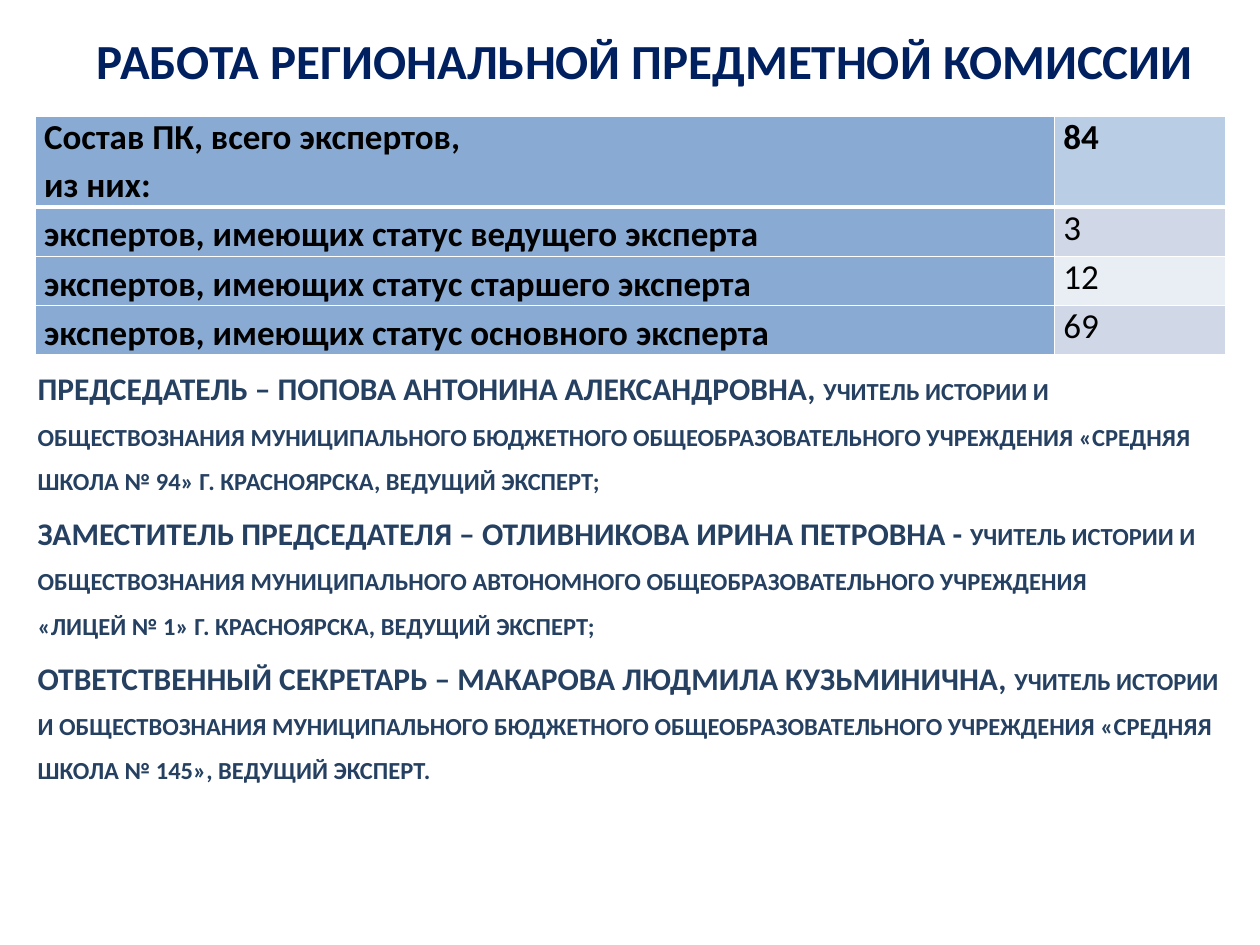
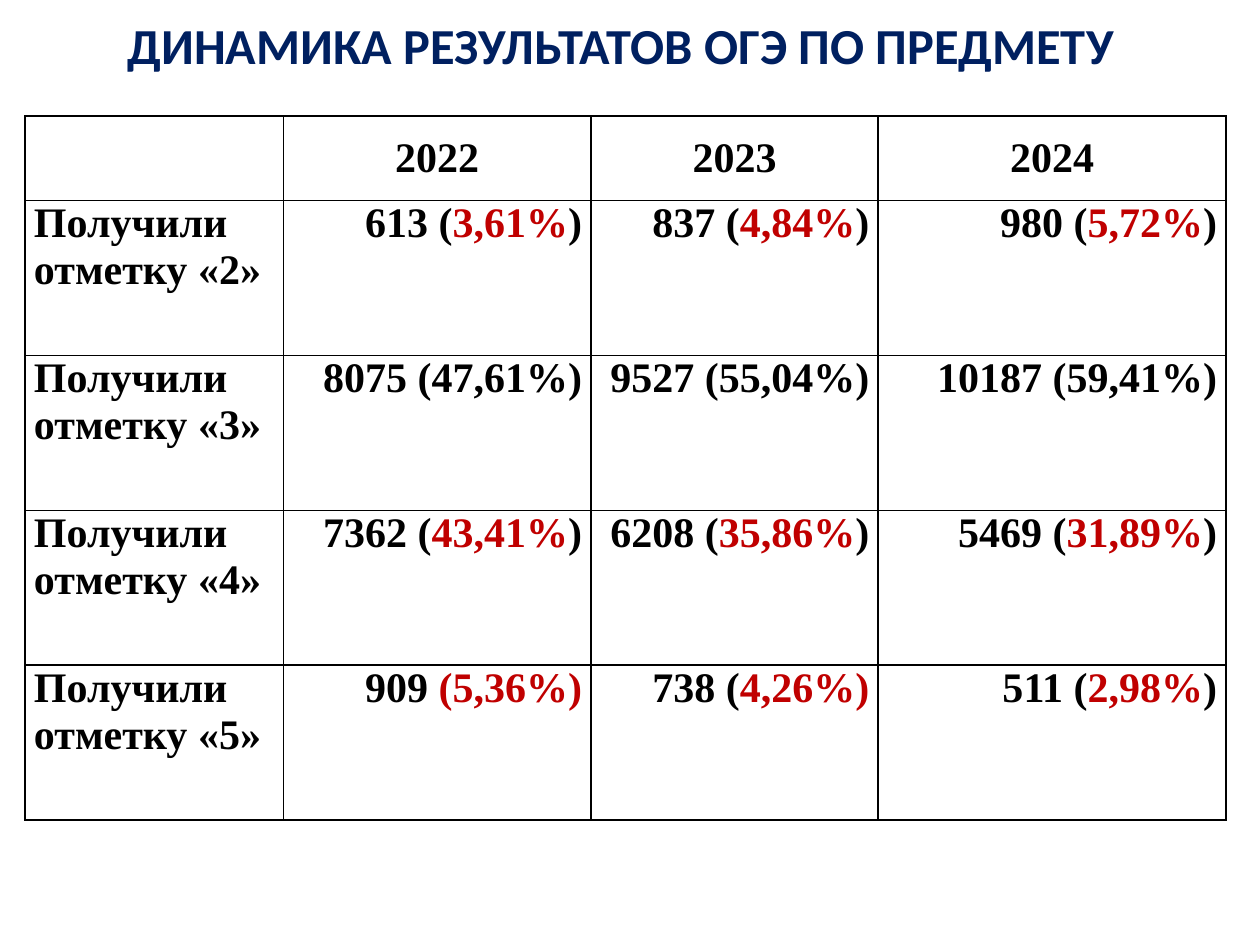
from dataclasses import dataclass

from lxml import etree
from pptx import Presentation
from pptx.dml.color import RGBColor
from pptx.enum.text import MSO_ANCHOR, MSO_AUTO_SIZE, PP_ALIGN
from pptx.oxml.ns import qn
from pptx.util import Inches, Pt

LEFT, CENTER, RIGHT = PP_ALIGN.LEFT, PP_ALIGN.CENTER, PP_ALIGN.RIGHT
TOP, MIDDLE = MSO_ANCHOR.TOP, MSO_ANCHOR.MIDDLE


@dataclass(frozen=True)
class Theme:
    sans: str = "Calibri"
    serif: str = "Times New Roman"
    title: str = "002060"
    body: str = "254061"
    black: str = "000000"
    white: str = "FFFFFF"
    accent: str = "C00000"
    label_fill: str = "89AAD3"
    total_fill: str = "B9CDE5"
    band_dark: str = "D0D8E8"
    band_light: str = "E9EDF4"
    experts_size: float = 20
    results_size: float = 24
    name_size: float = 18
    post_size: float = 14


THEME = Theme()


def style(font, name, size, color, bold=True):
    font.name = name
    font.size = Pt(size)
    font.bold = bold
    font.color.rgb = RGBColor.from_string(color)


def frame_cell(cell, color, top=1, bottom=1):
    cell.margin_left = cell.margin_right = Inches(0.07)
    cell.margin_top = cell.margin_bottom = 0
    properties = cell._tc.get_or_add_tcPr()
    for side, width in (("L", 1), ("R", 1), ("T", top), ("B", bottom)):
        line = etree.SubElement(properties, qn(f"a:ln{side}"), w=str(Pt(width)))
        solid = etree.SubElement(line, qn("a:solidFill"))
        etree.SubElement(solid, qn("a:srgbClr"), val=color)


deck = Presentation()
deck.slide_width, deck.slide_height = Inches(10), Inches(7.5)

titles = [
    ("РАБОТА РЕГИОНАЛЬНОЙ ПРЕДМЕТНОЙ КОМИССИИ", (0.43, 0.13, 9.37, 0.69), 28),
    ("ДИНАМИКА РЕЗУЛЬТАТОВ ОГЭ ПО ПРЕДМЕТУ\v", (0.43, 0.21, 9, 0.76), 28.8),
]
pages = []
for text, place, size in titles:
    page = deck.slides.add_slide(deck.slide_layouts[5])
    title = page.shapes.title
    title.left, title.top, title.width, title.height = map(Inches, place)
    title.text_frame.text = text
    title.text_frame.auto_size = MSO_AUTO_SIZE.NONE
    title.text_frame.vertical_anchor = MIDDLE
    para = title.text_frame.paragraphs[0]
    para.alignment = CENTER
    style(para.font, THEME.sans, size, THEME.title)
    pages.append(page)
commission_page, results_page = pages

tables = []
for page, place, widths, heights in [
    (commission_page, (0.28, 0.92, 9.45, 1.89), [8.09, 1.36], [0.71] + [0.39] * 3),
    (results_page, (0.2, 0.92, 9.53, 5.6), [2.05, 2.44, 2.28, 2.76], [0.67] + [1.23] * 4),
]:
    table = page.shapes.add_table(len(heights), len(widths), *map(Inches, place)).table
    table.first_row = table.horz_banding = False
    for column, width in zip(table.columns, widths):
        column.width = Inches(width)
    for row, height in zip(table.rows, heights):
        row.height = Inches(height)
    tables.append(table)
experts_table, results_table = tables

experts = [
    ("Состав ПК, всего экспертов,\nиз них:", "84", THEME.total_fill),
    ("экспертов, имеющих статус ведущего эксперта", "3", THEME.band_dark),
    ("экспертов, имеющих статус старшего эксперта", "12", THEME.band_light),
    ("экспертов, имеющих статус основного эксперта", "69", THEME.band_dark),
]
for row_index, (label, count, count_fill) in enumerate(experts):
    is_total = row_index == 0
    for column_index, (text, fill) in enumerate([(label, THEME.label_fill), (count, count_fill)]):
        is_label = column_index == 0
        cell = experts_table.cell(row_index, column_index)
        frame_cell(cell, THEME.white, top=3 if row_index == 1 else 1, bottom=3 if is_total else 1)
        cell.fill.solid()
        cell.fill.fore_color.rgb = RGBColor.from_string(fill)
        cell.text = text
        for para_index, para in enumerate(cell.text_frame.paragraphs):
            para.space_before = Pt(2 if para_index else 0)
            para.space_after = Pt(1)
            if is_label and not is_total:
                para.line_spacing = 1.15
            style(para.font, THEME.sans, THEME.experts_size, THEME.black, is_label or is_total)

officers = [
    ("ПРЕДСЕДАТЕЛЬ – ПОПОВА АНТОНИНА АЛЕКСАНДРОВНА, ",
     "УЧИТЕЛЬ ИСТОРИИ И ОБЩЕСТВОЗНАНИЯ МУНИЦИПАЛЬНОГО БЮДЖЕТНОГО ОБЩЕОБРАЗОВАТЕЛЬНОГО "
     "УЧРЕЖДЕНИЯ «СРЕДНЯЯ ШКОЛА № 94» Г. КРАСНОЯРСКА, ВЕДУЩИЙ ЭКСПЕРТ;"),
    ("ЗАМЕСТИТЕЛЬ ПРЕДСЕДАТЕЛЯ – ОТЛИВНИКОВА ИРИНА ПЕТРОВНА - ",
     "УЧИТЕЛЬ ИСТОРИИ И ОБЩЕСТВОЗНАНИЯ МУНИЦИПАЛЬНОГО АВТОНОМНОГО ОБЩЕОБРАЗОВАТЕЛЬНОГО "
     "УЧРЕЖДЕНИЯ"),
    ("", "«ЛИЦЕЙ № 1» Г. КРАСНОЯРСКА, ВЕДУЩИЙ ЭКСПЕРТ;"),
    ("ОТВЕТСТВЕННЫЙ СЕКРЕТАРЬ – МАКАРОВА ЛЮДМИЛА КУЗЬМИНИЧНА, ",
     "УЧИТЕЛЬ ИСТОРИИ И ОБЩЕСТВОЗНАНИЯ МУНИЦИПАЛЬНОГО БЮДЖЕТНОГО ОБЩЕОБРАЗОВАТЕЛЬНОГО "
     "УЧРЕЖДЕНИЯ «СРЕДНЯЯ ШКОЛА № 145», ВЕДУЩИЙ ЭКСПЕРТ."),
]
officers_box = commission_page.shapes.add_textbox(*map(Inches, (0.2, 2.73, 9.72, 3.55)))
officers_frame = officers_box.text_frame
officers_frame.word_wrap = True
for index, (name, post) in enumerate(officers):
    para = officers_frame.add_paragraph() if index else officers_frame.paragraphs[0]
    para.line_spacing = 1.5
    for text, size in [(name, THEME.name_size), (post, THEME.post_size)]:
        if text:
            span = para.add_run()
            span.text = text
            style(span.font, THEME.sans, size, THEME.body)

results = [
    ["", "2022", "2023", "2024"],
    ["Получили отметку «2»", "613 (|3,61%|)", "837 (|4,84%|)", "980 (|5,72%|)"],
    ["Получили отметку «3»", "8075 (47,61%)", "9527 (55,04%)", "10187 (59,41%)"],
    ["Получили отметку «4»", "7362 (|43,41%|)", "6208 (|35,86%|)", "5469 (|31,89%|)"],
    ["Получили отметку «5»", "909 |(5,36%)", "738 (|4,26%)", "511 (|2,98%|)"],
]
for row_index, values in enumerate(results):
    for column_index, value in enumerate(values):
        cell = results_table.cell(row_index, column_index)
        frame_cell(cell, THEME.black)
        cell.fill.background()
        cell.vertical_anchor = TOP if row_index else MIDDLE
        para = cell.text_frame.paragraphs[0]
        para.alignment = CENTER if row_index == 0 else RIGHT if column_index else LEFT
        style(para.font, THEME.serif, THEME.results_size, THEME.black)
        for part_index, part in enumerate(value.split("|")):
            if part:
                span = para.add_run()
                span.text = part
                if part_index % 2:
                    span.font.color.rgb = RGBColor.from_string(THEME.accent)

deck.save("out.pptx")
